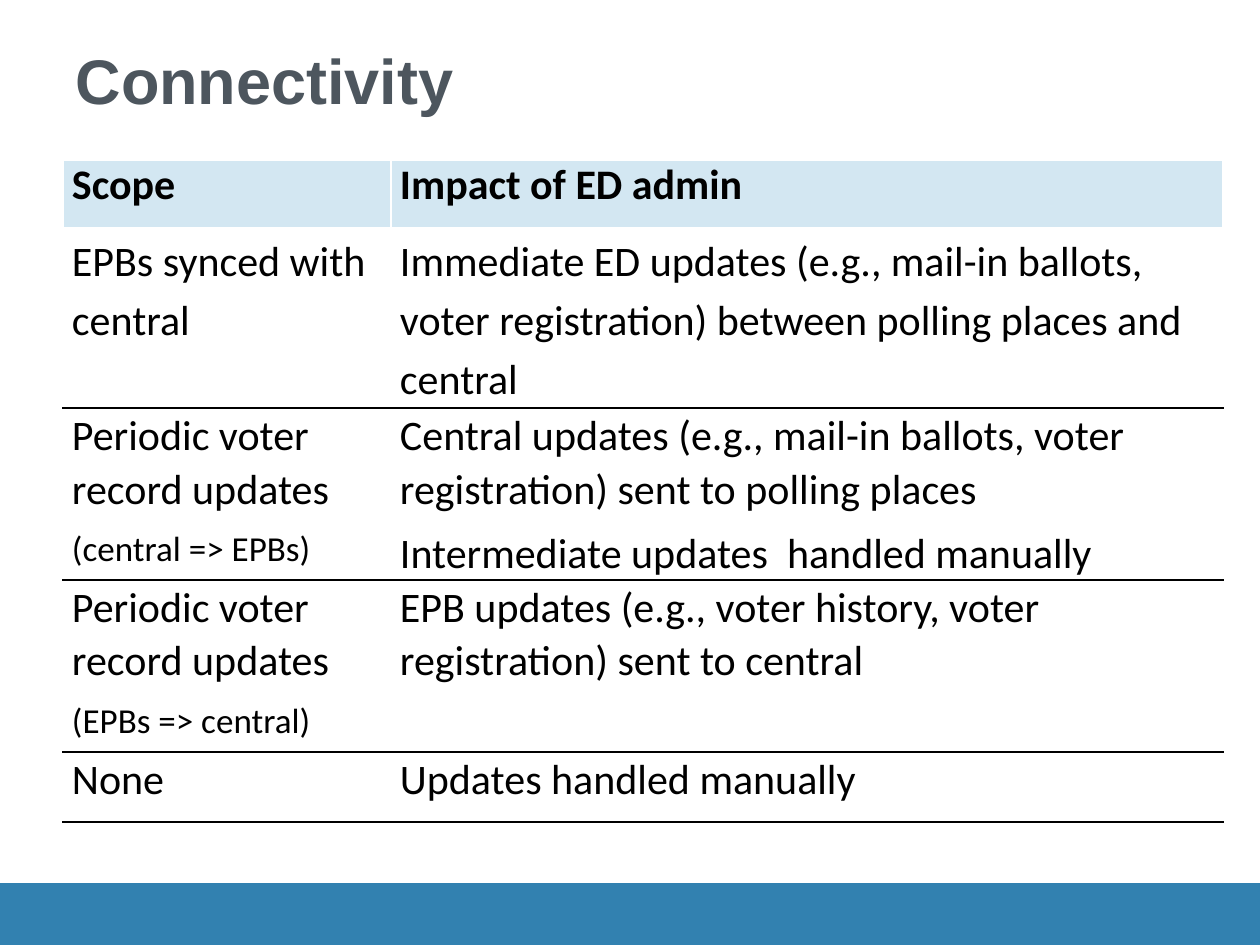
import lxml.etree
import pptx
import pptx.dml.color
import pptx.enum.shapes
import pptx.enum.text
import pptx.oxml.ns
import pptx.util

# Content: each cell is a list of (text, size in points)
TITLE = "Connectivity"
ROWS = [
    [[("Scope", 24)], [("Impact of ED admin", 24)]],
    [[("EPBs synced with central", 24)],
     [("Immediate ED updates (e.g., mail-in ballots, voter registration) "
       "between polling places and central", 24)]],
    [[("Periodic voter record updates", 24), ("(central => EPBs)", 20)],
     [("Central updates (e.g., mail-in ballots, voter registration) "
       "sent to polling places", 24),
      ("Intermediate updates  handled manually", 24)]],
    [[("Periodic voter record updates", 24), ("(EPBs => central)", 20)],
     [("EPB updates (e.g., voter history, voter registration) "
       "sent to central", 24)]],
    [[("None", 24)], [("Updates handled manually", 24)]],
]
COLORS = {"title": "4D565E", "text": "000000", "header": "D3E7F2",
          "white": "FFFFFF", "rule": "000000", "footer": "3281B0"}

# Layout in px
SLIDE_WIDTH, SLIDE_HEIGHT = 1260, 945
FOOTER_TOP = 884
TABLE_LEFT, TABLE_TOP = 63, 160
COLUMN_WIDTHS = [328, 832]
ROW_HEIGHTS = [69, 179, 171, 172, 70]
CELL_INSET = 9

# Line spacing, space before and space after, by row; the rest use BODY_SPACING
BODY_SPACING = (1.05, 3, 3)
ROW_SPACING = {0: (1.0, 3, 3), 1: (1.15, 0, 8)}


def px(length):
    return pptx.util.Emu(round(length * 914400 / 126))


def rgb(name):
    return pptx.dml.color.RGBColor.from_string(COLORS[name])


def format_font(paragraph, name, size, color, bold):
    for run in paragraph.runs:
        run.font.name = name
        run.font.size = pptx.util.Pt(size)
        run.font.bold = bold
        run.font.color.rgb = rgb(color)


def set_borders(cell, borders):
    """Draw (side, color, points) borders; sides come in the order L, R, T, B."""
    qn = pptx.oxml.ns.qn
    properties = cell._tc.get_or_add_tcPr()
    for side, color, points in borders:
        line = lxml.etree.SubElement(properties, qn("a:ln" + side),
                                     w=str(pptx.util.Pt(points)))
        fill = lxml.etree.SubElement(line, qn("a:solidFill"))
        lxml.etree.SubElement(fill, qn("a:srgbClr"), val=COLORS[color])


def fill_cell(cell, content, row_index):
    is_header = row_index == 0
    top = "white" if row_index < 2 else "rule"
    bottom = ("white", 3) if is_header else ("rule", 1)
    set_borders(cell, [("L", "white", 1), ("R", "white", 1),
                       ("T", top, 3 if row_index == 1 else 1), ("B", *bottom)])
    cell.fill.solid()
    cell.fill.fore_color.rgb = rgb("header" if is_header else "white")
    cell.margin_left = cell.margin_right = px(CELL_INSET)
    cell.margin_top = cell.margin_bottom = 0

    line_spacing, before, after = ROW_SPACING.get(row_index, BODY_SPACING)
    cell.text_frame.text = "\n".join(text for text, size in content)
    for paragraph, (text, size) in zip(cell.text_frame.paragraphs, content):
        paragraph.line_spacing = line_spacing
        paragraph.space_before = pptx.util.Pt(before)
        paragraph.space_after = pptx.util.Pt(after)
        format_font(paragraph, "Calibri", size, "text", is_header)


def main():
    presentation = pptx.Presentation()
    presentation.slide_width = px(SLIDE_WIDTH)
    presentation.slide_height = px(SLIDE_HEIGHT)
    slide = presentation.slides.add_slide(presentation.slide_layouts[5])

    # Footer bar
    footer = slide.shapes.add_shape(
        pptx.enum.shapes.MSO_SHAPE.RECTANGLE, 0, px(FOOTER_TOP),
        px(SLIDE_WIDTH), px(SLIDE_HEIGHT - FOOTER_TOP))
    footer.shadow.inherit = False
    footer.fill.solid()
    footer.fill.fore_color.rgb = rgb("footer")
    footer.line.color.rgb = rgb("footer")
    footer.line.width = pptx.util.Pt(0.75)

    # Title
    title = slide.shapes.title
    title.left, title.top, title.width, title.height = map(px, (63, 38, 1134, 85))
    title.text_frame.text = TITLE
    title.text_frame.vertical_anchor = pptx.enum.text.MSO_ANCHOR.BOTTOM
    paragraph = title.text_frame.paragraphs[0]
    paragraph.alignment = pptx.enum.text.PP_ALIGN.LEFT
    format_font(paragraph, "Arial", 36, "title", True)

    # Table
    table = slide.shapes.add_table(
        len(ROWS), len(COLUMN_WIDTHS), px(TABLE_LEFT), px(TABLE_TOP),
        px(sum(COLUMN_WIDTHS)), px(sum(ROW_HEIGHTS))).table
    table.horz_banding = False
    for column, width in zip(table.columns, COLUMN_WIDTHS):
        column.width = px(width)
    for row_index, (row, height) in enumerate(zip(table.rows, ROW_HEIGHTS)):
        row.height = px(height)
        for cell, content in zip(row.cells, ROWS[row_index]):
            fill_cell(cell, content, row_index)

    presentation.save("out.pptx")


if __name__ == "__main__":
    main()
